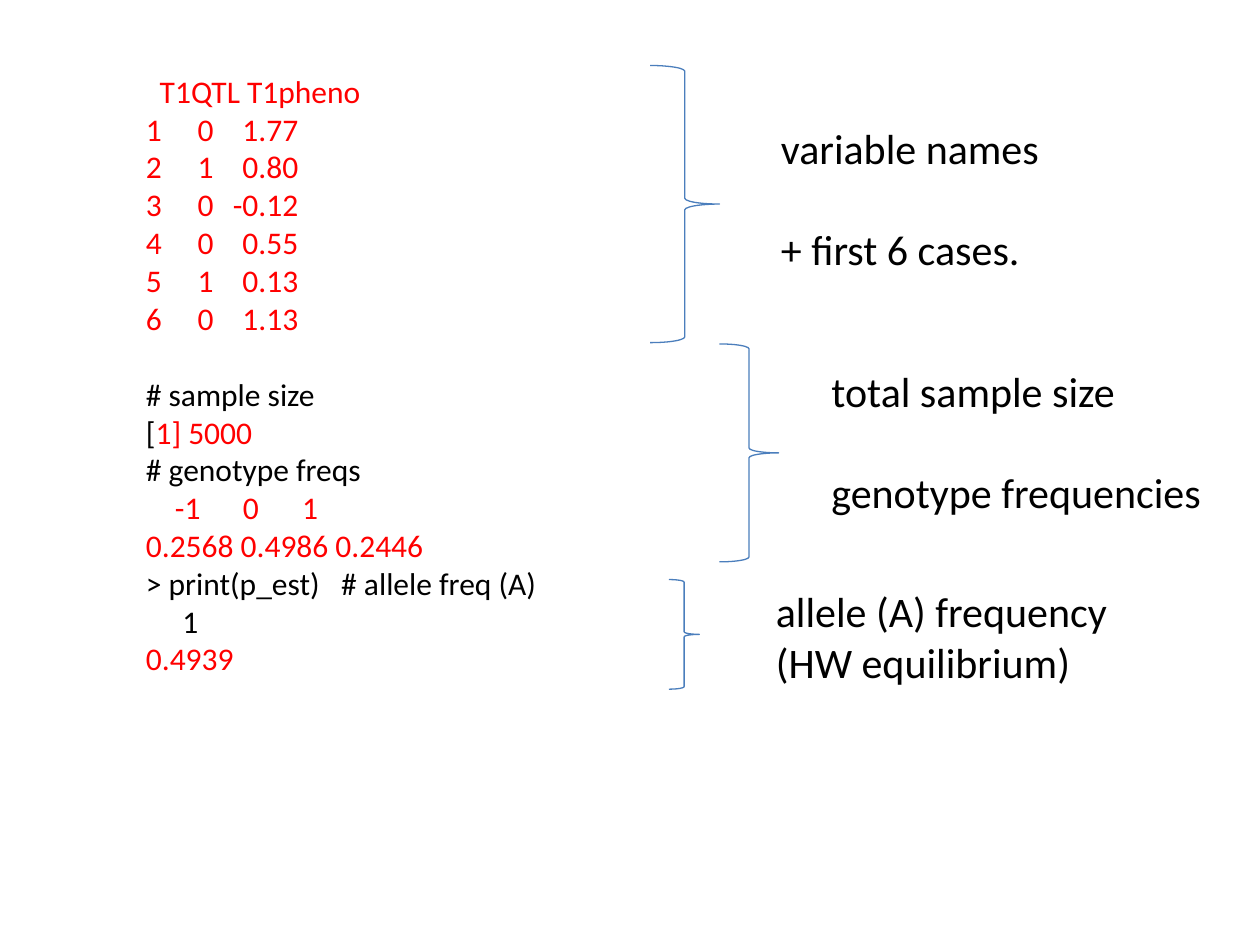
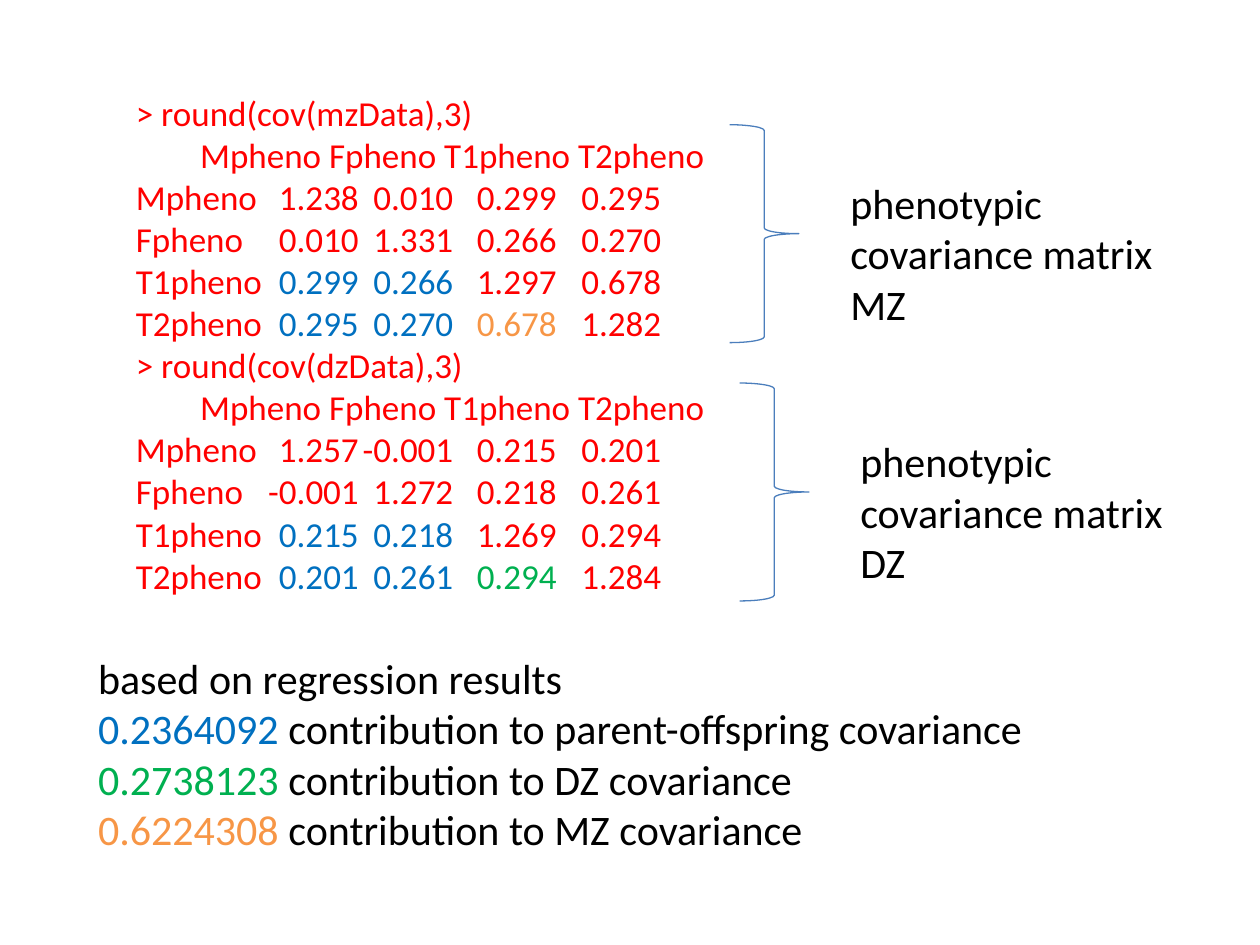
from dataclasses import dataclass

from lxml import etree
from pptx import Presentation
from pptx import util as u
from pptx.dml import color
from pptx.enum import shapes, text
from pptx.oxml import ns


@dataclass(frozen=True)
class Theme:
    font: str = "Calibri"
    black: str = "000000"
    output: str = "FF0000"
    parent: str = "0070C0"
    dz: str = "00B050"
    mz: str = "F79646"
    brace: str = "4B7EBC"
    small: int = 18
    medium: int = 20
    large: int = 24
    brace_width: float = 0.75
    line_height: float = 1.21


THEME = Theme()


@dataclass(frozen=True)
class Line:
    """One paragraph: (text, colour) spans, (place, alignment) tab stops."""
    spans: tuple
    tabs: tuple = ()
    gap: bool = False  # leave one line free above


def line(words, colour=THEME.black, tabs=(), gap=False):
    return Line(((words, colour),), tabs, gap)


class SlideBuilder:
    def __init__(self, theme):
        self.theme = theme
        self.deck = Presentation()
        self.deck.slide_width = u.Inches(10)
        self.deck.slide_height = u.Inches(7.5)
        self.page = None

    def new_slide(self):
        self.page = self.deck.slides.add_slide(self.deck.slide_layouts[6])

    def text_box(self, left, top, width, height, lines, size, wrap=True):
        box = self.page.shapes.add_textbox(
            u.Inches(left), u.Inches(top), u.Inches(width), u.Inches(height))
        frame = box.text_frame
        frame.word_wrap = wrap
        frame.auto_size = text.MSO_AUTO_SIZE.SHAPE_TO_FIT_TEXT
        for number, item in enumerate(lines):
            para = frame.add_paragraph() if number else frame.paragraphs[0]
            self.fill_paragraph(para, item, size)

    def fill_paragraph(self, para, item, size):
        if item.gap:
            para.space_before = u.Pt(round(size * self.theme.line_height))
        if item.tabs:
            self.tab_stops(para, item.tabs)
        para.font.name = self.theme.font
        para.font.size = u.Pt(size)
        shared_colour = len(item.spans) == 1
        for words, colour in item.spans:
            span = para.add_run()
            span.text = words
            font = para.font if shared_colour else span.font
            font.color.rgb = color.RGBColor.from_string(colour)

    def tab_stops(self, para, tabs):
        stops = etree.SubElement(para._p.get_or_add_pPr(), ns.qn("a:tabLst"))
        for place, align in tabs:
            etree.SubElement(stops, ns.qn("a:tab"),
                             pos=str(u.Inches(place)), algn=align)

    def label(self, left, top, width, height, lines):
        self.text_box(left, top, width, height, lines, self.theme.large, wrap=False)

    def brace(self, left, top, width, height):
        brace = self.page.shapes.add_shape(
            shapes.MSO_SHAPE.RIGHT_BRACE, u.Inches(left), u.Inches(top),
            u.Inches(width), u.Inches(height))
        brace.shadow.inherit = False
        brace.fill.background()
        brace.line.color.rgb = color.RGBColor.from_string(self.theme.brace)
        brace.line.width = u.Pt(self.theme.brace_width)


def build_sample_slide(builder):
    builder.new_slide()
    red = THEME.output

    # Console output
    case_tabs = ((0.41, "l"), (1.21, "r"))
    cases = [(0, "1.77"), (1, "0.80"), (0, "-0.12"),
             (0, "0.55"), (1, "0.13"), (0, "1.13")]
    console = [line("\tT1QTL T1pheno", red, ((0.11, "l"),))]
    console += [line(f"{number}\t{qtl}\t{pheno}", red, case_tabs)
                for number, (qtl, pheno) in enumerate(cases, 1)]
    console += [
        line("# sample size", gap=True),
        Line((("[", THEME.black), ("1] 5000", red))),
        line("# genotype freqs"),
        line("\t-1\t0\t1", red, ((0.23, "l"), (0.77, "l"), (1.24, "l"))),
        line("0.2568 0.4986 0.2446", red),
        line("> print(p_est)\t# allele freq (A)", tabs=((1.55, "l"),)),
        line("\t1", tabs=((0.29, "l"),)),
        line("0.4939", red),
    ]
    builder.text_box(1.06, 0.52, 5, 4.95, console, THEME.small)

    # Braces and what they mark
    builder.brace(5.16, 0.52, 0.55, 2.2)
    builder.label(6.1, 0.92, 2.27, 1.31,
                  [line("variable names"), line("+ first 6 cases.", gap=True)])
    builder.brace(5.71, 2.73, 0.47, 1.73)
    builder.label(6.5, 2.85, 3.17, 1.31,
                  [line("total sample size"), line("genotype frequencies", gap=True)])
    builder.brace(5.31, 4.6, 0.24, 0.87)
    builder.label(6.06, 4.6, 2.86, 0.91,
                  [line("allele (A) frequency"), line("(HW equilibrium)")])


def covariance_lines(data_name, matrix, twin_colour):
    """Print a covariance matrix, colouring the cells discussed below it."""
    names = ("Mpheno", "Fpheno", "T1pheno", "T2pheno")
    tabs = tuple((place, "r") for place in (1.77, 2.52, 3.34, 4.17))
    red = THEME.output
    lines = [line(f"> round(cov({data_name}),3)", red),
             line("\t" + " ".join(names), red, ((0.51, "l"),))]
    for row, (name, values) in enumerate(zip(names, matrix)):
        cells = [f"\t{value:.3f}" for value in values]
        if row < 2:
            lines.append(line(name + "".join(cells), red, tabs))
            continue
        third = twin_colour if row == 3 else red
        spans = ((name, red), ("".join(cells[:2]), THEME.parent),
                 (cells[2], third), (cells[3], red))
        lines.append(Line(spans, tabs))
    return lines


def build_covariance_slide(builder):
    builder.new_slide()

    # Console output
    mz_matrix = [(1.238, 0.010, 0.299, 0.295), (0.010, 1.331, 0.266, 0.270),
                 (0.299, 0.266, 1.297, 0.678), (0.295, 0.270, 0.678, 1.282)]
    dz_matrix = [(1.257, -0.001, 0.215, 0.201), (-0.001, 1.272, 0.218, 0.261),
                 (0.215, 0.218, 1.269, 0.294), (0.201, 0.261, 0.294, 1.284)]
    console = (covariance_lines("mzData", mz_matrix, THEME.mz)
               + covariance_lines("dzData", dz_matrix, THEME.dz))
    builder.text_box(0.98, 0.68, 7.32, 4.14, console, THEME.medium)

    # Braces and matrix labels
    for twins, left, top in (("MZ", 5.79, 0.99), ("DZ", 5.87, 3.04)):
        builder.brace(left, top, 0.55, 1.73)
        builder.label(left + 0.86, top + 0.37, 2.62, 1.31,
                      [line(words) for words in
                       ("phenotypic", "covariance matrix", twins)])

    # Regression results
    contributions = [("0.2364092", THEME.parent, "parent-offspring"),
                     ("0.2738123", THEME.dz, "DZ"),
                     ("0.6224308", THEME.mz, "MZ")]
    results = [line("based on regression results")]
    results += [Line(((value + " ", colour),
                      (f"contribution to {pair} covariance", THEME.black)))
                for value, colour, pair in contributions]
    builder.text_box(0.68, 5.13, 8.64, 1.72, results, THEME.large)


def main():
    builder = SlideBuilder(THEME)
    build_sample_slide(builder)
    build_covariance_slide(builder)
    builder.deck.save("out.pptx")


if __name__ == "__main__":
    main()
